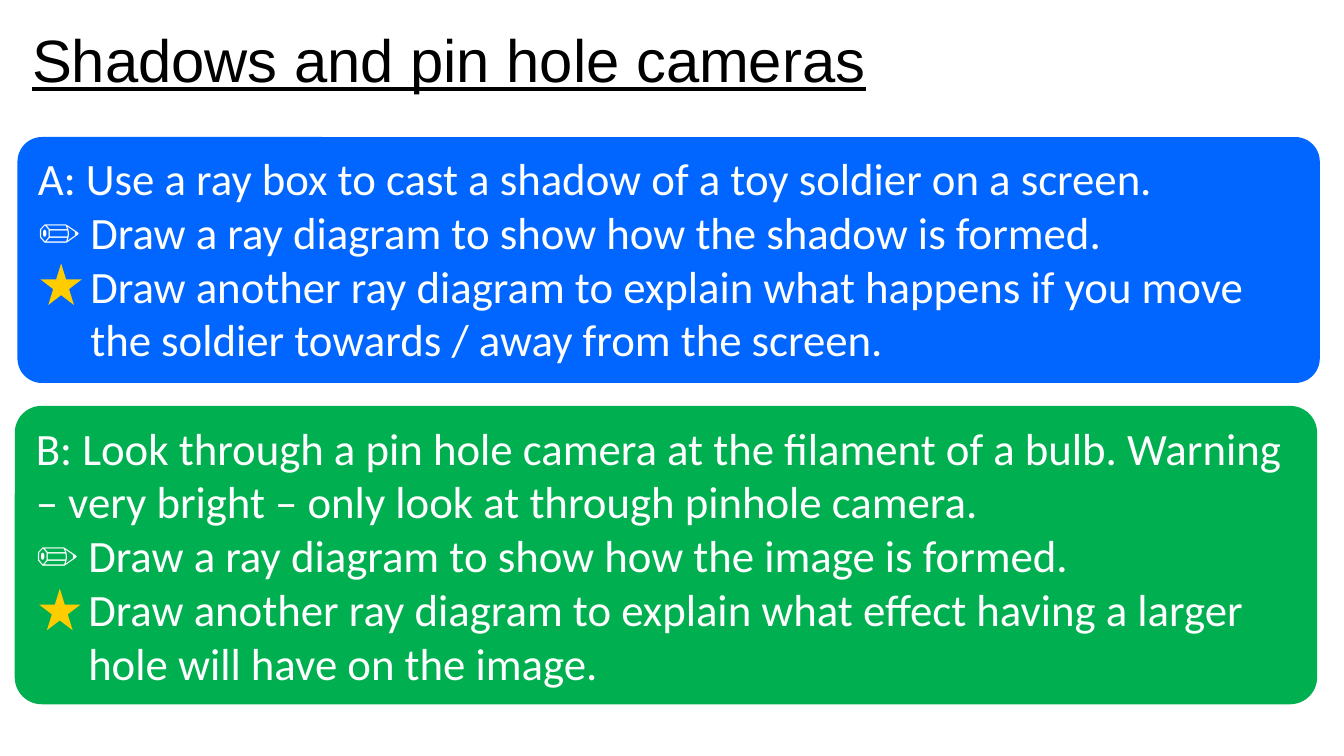
from pptx import Presentation
from pptx.dml.color import RGBColor
from pptx.enum.shapes import MSO_SHAPE as Preset
from pptx.enum.text import MSO_ANCHOR as Anchor, MSO_AUTO_SIZE as AutoSize, PP_ALIGN as Align
from pptx.util import Inches, Pt

BLACK = RGBColor(0x00, 0x00, 0x00)
WHITE = RGBColor(0xFF, 0xFF, 0xFF)
BLUE = RGBColor(0x00, 0x66, 0xFF)
GREEN = RGBColor(0x00, 0xB0, 0x50)
GOLD = RGBColor(0xFF, 0xCC, 0x00)

HANGING = Inches(0.39)
STAR_SIZE = 0.31

TASKS = [
    (0.13, 1.02, 1.83, 0.1, BLUE, (0.3, 1.96), [
        "A: Use a ray box to cast a shadow of a toy soldier on a screen.",
        "✏\tDraw a ray diagram to show how the shadow is formed.",
        "\tDraw another ray diagram to explain what happens if you move the soldier towards / away from the screen.",
    ]),
    (0.11, 3.02, 2.22, 0.09, GREEN, (0.29, 4.38), [
        "B: Look through a pin hole camera at the filament of a bulb. Warning – very bright – only look at through pinhole camera.",
        "✏\tDraw a ray diagram to show how the image is formed.",
        "\tDraw another ray diagram to explain what effect having a larger hole will have on the image.",
    ]),
]


def add_filled_shape(preset, left, top, width, height, color):
    shape = slide.shapes.add_shape(preset, Inches(left), Inches(top), Inches(width), Inches(height))
    shape.shadow.inherit = False
    shape.fill.solid()
    shape.fill.fore_color.rgb = color
    shape.line.fill.background()
    return shape


def format_run(run, name, size, color):
    run.font.name = name
    run.font.size = Pt(size)
    run.font.color.rgb = color


presentation = Presentation()
presentation.slide_width = Inches(10)
presentation.slide_height = Inches(10 * 9 / 16)
slide = presentation.slides.add_slide(presentation.slide_layouts[6])

title = slide.shapes.add_textbox(Inches(0.14), Inches(0.12), Inches(7.39), Inches(0.64))
title_frame = title.text_frame
title_frame.word_wrap = True
title_frame.auto_size = AutoSize.SHAPE_TO_FIT_TEXT
title_frame.text = "Shadows and pin hole cameras"
title_run = title_frame.paragraphs[0].runs[0]
format_run(title_run, "Arial", 32, BLACK)
title_run.font.underline = True

for left, top, height, corner, color, star_position, lines in TASKS:
    panel = add_filled_shape(Preset.ROUNDED_RECTANGLE, left, top, 9.69, height, color)
    panel.adjustments[0] = corner
    text_frame = panel.text_frame
    text_frame.word_wrap = True
    text_frame.vertical_anchor = Anchor.TOP
    text_frame.text = "\n".join(lines)
    for index, paragraph in enumerate(text_frame.paragraphs):
        paragraph.alignment = Align.LEFT
        if index > 0:
            properties = paragraph._p.get_or_add_pPr()
            properties.set("marL", str(HANGING))
            properties.set("indent", str(-HANGING))
        for run in paragraph.runs:
            format_run(run, "Calibri", 24, WHITE)
    add_filled_shape(Preset.STAR_5_POINT, *star_position, STAR_SIZE, STAR_SIZE, GOLD)

presentation.save("out.pptx")
